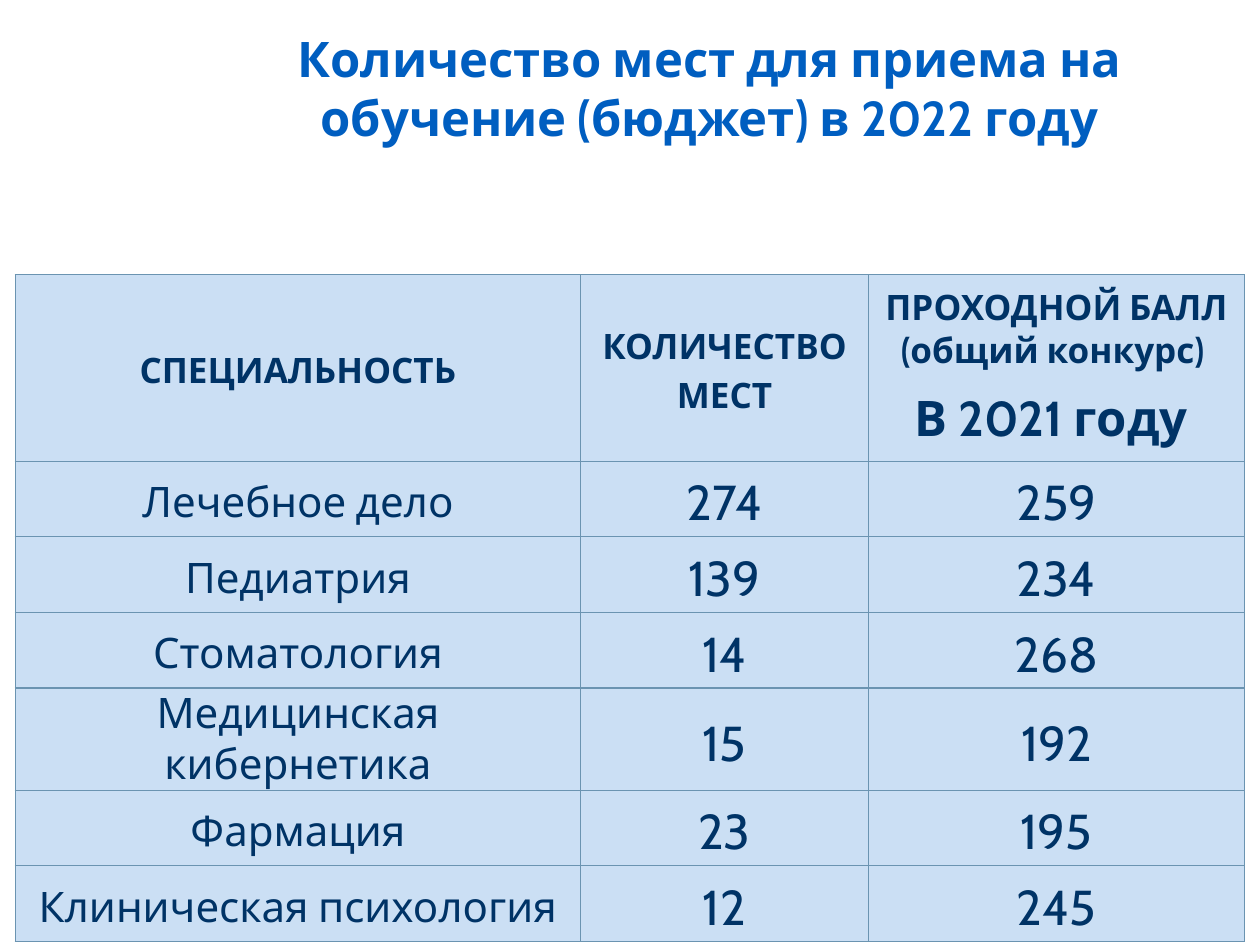
from lxml.etree import SubElement
from pptx import Presentation
from pptx.dml.color import RGBColor
from pptx.enum.text import MSO_ANCHOR, MSO_AUTO_SIZE, PP_ALIGN
from pptx.oxml.ns import qn
from pptx.util import Pt

TITLE = "Количество мест для приема на обучение (бюджет) в 2022 году"
HEADERS = [
    ["СПЕЦИАЛЬНОСТЬ"],
    ["КОЛИЧЕСТВО МЕСТ"],
    ["ПРОХОДНОЙ БАЛЛ (общий конкурс) ", "В 2021 году "],
]
SPECIALTIES = [
    ("Лечебное дело", 274, 259),
    ("Педиатрия", 139, 234),
    ("Стоматология", 14, 268),
    ("Медицинская кибернетика", 15, 192),
    ("Фармация", 23, 195),
    ("Клиническая психология", 12, 245),
]
COLUMN_WIDTHS = [323.28, 164.16, 215.28]
ROW_HEIGHTS = [106.56, 43.2, 43.2, 43.2, 48.24, 43.2, 43.2]


def color(value):
    return RGBColor.from_string(value)


def apply(target, values):
    for name, value in values.items():
        setattr(target, name, value)


class AdmissionSlide:
    """Hold the style and the slide that shows admission places."""

    font_name = "Cabin"
    title_color = "005EC0"
    text_color = "003366"
    cell_color = "CBDFF4"
    border_color = "6B94B1"
    cell_format = {
        "vertical_anchor": MSO_ANCHOR.MIDDLE,
        "margin_left": Pt(5),
        "margin_right": Pt(5),
        "margin_top": Pt(0),
        "margin_bottom": Pt(0),
    }

    def __init__(self, presentation):
        self.slide = presentation.slides.add_slide(presentation.slide_layouts[5])

    def fill_paragraph(self, paragraph, text, size, bold, text_color, **spacing):
        paragraph.text = text
        apply(paragraph, {"alignment": PP_ALIGN.CENTER, **spacing})
        font = paragraph.runs[0].font
        apply(font, {"name": self.font_name, "size": Pt(size), "bold": bold})
        font.color.rgb = color(text_color)

    def title(self, text, left, top, width, height):
        shape = self.slide.shapes.title
        apply(shape, {"left": Pt(left), "top": Pt(top), "width": Pt(width), "height": Pt(height)})
        apply(shape.text_frame, {
            "vertical_anchor": MSO_ANCHOR.MIDDLE,
            "auto_size": MSO_AUTO_SIZE.NONE,
            "word_wrap": True,
        })
        self.fill_paragraph(shape.text_frame.paragraphs[0], text, 28, True, self.title_color)

    def borders(self, cell):
        properties = cell._tc.get_or_add_tcPr()
        for index, side in enumerate(("a:lnL", "a:lnR", "a:lnT", "a:lnB")):
            line = SubElement(properties, qn(side), w=str(Pt(0.75)))
            fill = SubElement(line, qn("a:solidFill"))
            SubElement(fill, qn("a:srgbClr"), val=self.border_color)
            properties.insert(index, line)

    def cell(self, cell, lines, sizes, bold, line_spacing):
        apply(cell, self.cell_format)
        cell.fill.solid()
        cell.fill.fore_color.rgb = color(self.cell_color)
        self.borders(cell)
        frame = cell.text_frame
        for index, (text, size) in enumerate(zip(lines, sizes)):
            paragraph = frame.add_paragraph() if index else frame.paragraphs[0]
            self.fill_paragraph(paragraph, text, size, bold, self.text_color,
                                line_spacing=line_spacing, space_after=Pt(10))

    def table(self, left, top):
        shape = self.slide.shapes.add_table(
            len(ROW_HEIGHTS), len(COLUMN_WIDTHS), Pt(left), Pt(top),
            Pt(sum(COLUMN_WIDTHS)), Pt(sum(ROW_HEIGHTS)))
        table = shape.table
        apply(table, {"first_row": False, "horz_banding": False})
        for column, width in zip(table.columns, COLUMN_WIDTHS):
            column.width = Pt(width)
        for row, height in zip(table.rows, ROW_HEIGHTS):
            row.height = Pt(height)
        for column, lines in enumerate(HEADERS):
            spacing = 1.0 if len(lines) > 1 else 1.15
            self.cell(table.cell(0, column), lines, (20, 28), True, spacing)
        for row, values in enumerate(SPECIALTIES, start=1):
            for column, value in enumerate(values):
                size = 28 if column else 24
                spacing = 1.0 if value == "Медицинская кибернетика" else 1.15
                self.cell(table.cell(row, column), [str(value)], [size], False, spacing)


def main():
    presentation = Presentation()
    apply(presentation, {"slide_width": Pt(720), "slide_height": Pt(540)})
    slide = AdmissionSlide(presentation)
    slide.title(TITLE, 99.36, 0, 612, 100.08)
    slide.table(8.64, 156.96)
    presentation.save("out.pptx")


if __name__ == "__main__":
    main()
